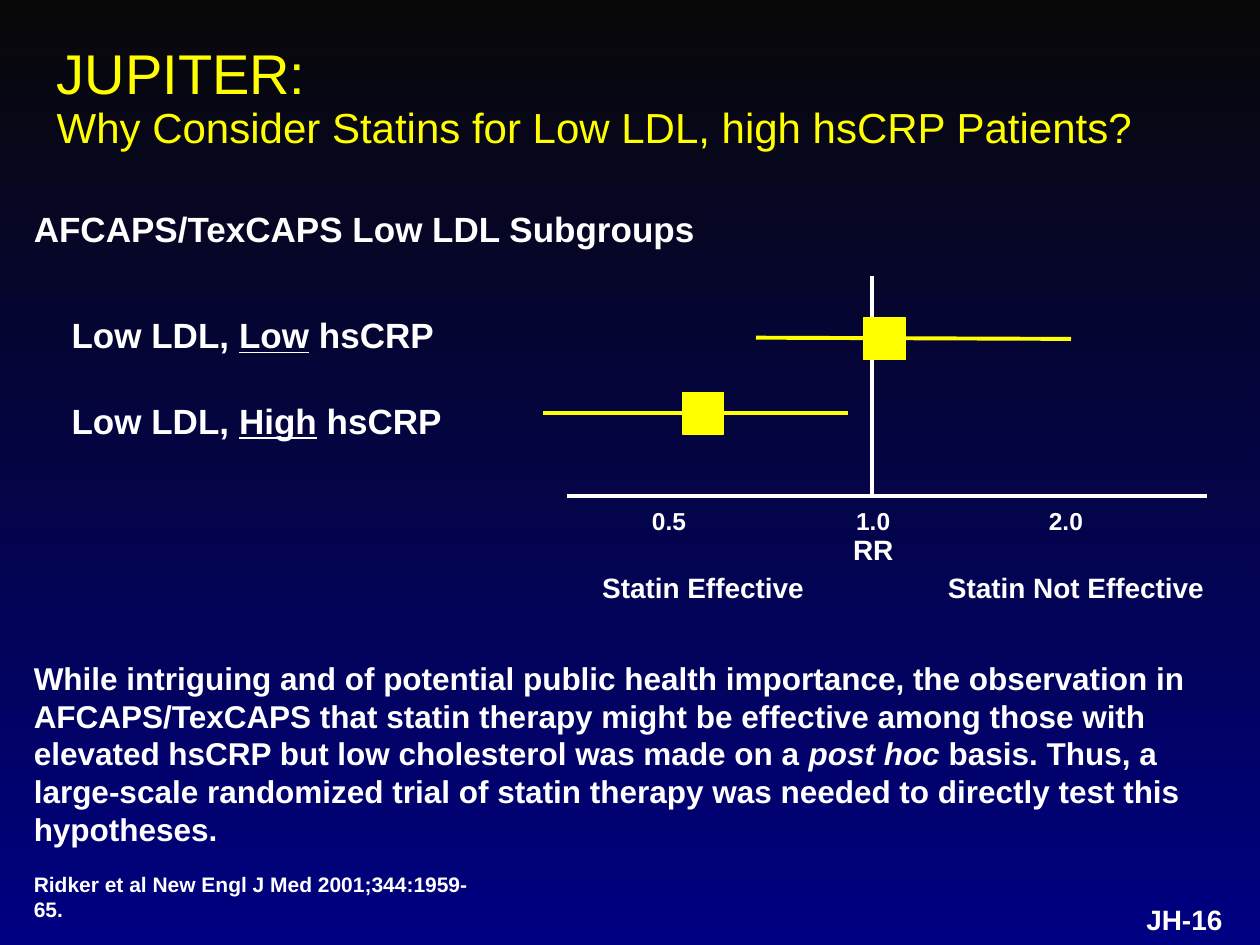
from dataclasses import dataclass

from lxml import etree
from pptx import Presentation
from pptx.dml.color import RGBColor
from pptx.enum.shapes import MSO_CONNECTOR, MSO_SHAPE
from pptx.enum.text import MSO_ANCHOR, MSO_AUTO_SIZE, PP_ALIGN
from pptx.oxml.ns import qn
from pptx.util import Inches, Pt

LEFT, CENTER, RIGHT = PP_ALIGN.LEFT, PP_ALIGN.CENTER, PP_ALIGN.RIGHT
TOP, BOTTOM = MSO_ANCHOR.TOP, MSO_ANCHOR.BOTTOM
NO_FIT = MSO_AUTO_SIZE.NONE
STRAIGHT, RECT = MSO_CONNECTOR.STRAIGHT, MSO_SHAPE.RECTANGLE


@dataclass(frozen=True)
class Theme:
    font: str = "Arial"
    white: RGBColor = RGBColor(0xFF, 0xFF, 0xFF)
    yellow: RGBColor = RGBColor(0xFF, 0xFF, 0x00)
    dark: RGBColor = RGBColor(0x08, 0x08, 0x08)
    blue: RGBColor = RGBColor(0x00, 0x00, 0x82)
    title: int = 32
    sub: int = 24
    head: int = 20
    body: int = 18
    label: int = 16
    tick: int = 14
    cite: int = 12
    rule: float = 2.25


THEME = Theme()


def set_font(font, size, color, bold):
    font.name = THEME.font
    font.size = Pt(size)
    font.bold = bold
    font.color.rgb = color


def add_text(slide, box, lines, size, align=LEFT, anchor=TOP, wrap=True, gap=0):
    left, top, width, height = box
    shape = slide.shapes.add_textbox(
        Inches(left), Inches(top), Inches(width), Inches(height))
    frame = shape.text_frame
    frame.word_wrap = wrap
    frame.vertical_anchor = anchor
    for index, parts in enumerate(lines):
        para = frame.add_paragraph() if index else frame.paragraphs[0]
        para.alignment = align
        para.space_before = Pt(gap if index else 0)
        set_font(para.font, size, THEME.white, True)
        for text, style in parts:
            run = para.add_run()
            run.text = text
            if style == "italic":
                run.font.italic = True
            elif style == "under":
                run.font.underline = True


def add_label(slide, box, text, size, **options):
    add_text(slide, box, [[(text, None)]], size, **options)


def add_line(slide, start, end, color):
    line = slide.shapes.add_connector(
        STRAIGHT, *(Inches(value) for value in (*start, *end)))
    line.line.color.rgb = color
    line.line.width = Pt(THEME.rule)
    etree.SubElement(line._element.spPr, qn("a:effectLst"))


def add_back(slide):
    fill = slide.background.fill
    fill.gradient()
    fill.gradient_angle = 270
    for stop, color, place in zip(
            fill.gradient_stops, (THEME.dark, THEME.blue), (0, 1)):
        stop.color.rgb = color
        stop.position = place


def add_title(slide, box):
    title = slide.shapes.title
    title.left, title.top, title.width, title.height = map(Inches, box)
    frame = title.text_frame
    frame.auto_size = NO_FIT
    frame.word_wrap = True
    frame.vertical_anchor = BOTTOM
    para = frame.paragraphs[0]
    para.alignment = LEFT
    para.line_spacing = 0.9
    set_font(para.font, THEME.title, THEME.yellow, False)
    run = para.add_run()
    run.text = "JUPITER:"
    run.font.size = Pt(THEME.title)
    para.add_line_break()
    run = para.add_run()
    run.text = "Why Consider Statins for Low LDL, high hsCRP Patients?"
    run.font.size = Pt(THEME.sub)


def add_groups(slide, box):
    left, top, width, height = box
    add_label(slide, (left, top, width, 0.43),
              "AFCAPS/TexCAPS Low LDL Subgroups", THEME.head, wrap=False)
    lines = [[("Low LDL, ", None), (level, "under"), (" hsCRP", None)]
             for level in ("Low", "High")]
    add_text(slide, (left + 0.3, top + 0.84, 3.14, height - 0.84),
             lines, THEME.head, wrap=False, gap=25)


def add_forest(slide, box):
    left, top, width, height = box
    base = top + 1.75
    axis = left + 2.61
    add_line(slide, (left + 0.19, base), (left + width, base), THEME.white)
    add_line(slide, (axis, base), (axis, top), THEME.white)

    ticks = (("0.5", 1.0), ("1.0", 2.62), ("2.0", 4.15))
    for text, mid in ticks:
        add_label(slide, (left + mid - 0.24, base + 0.03, 0.48, 0.33),
                  text, THEME.tick, align=CENTER, wrap=False)
    notes = (("Statin Effective", 1.27, 0.54, 1.81),
             ("RR", 2.62, 0.24, 0.52),
             ("Statin Not Effective", 4.23, 0.54, 2.24))
    for text, mid, drop, wide in notes:
        add_label(slide, (left + mid - wide / 2, base + drop, wide, 0.37),
                  text, THEME.label, align=CENTER, wrap=False)

    side = 0.33
    rows = ((1.69, 4.19, 2.71, 0.49, 0.5), (0, 2.42, 1.27, 1.09, 1.09))
    for low, high, mid, start, end in rows:
        mark = slide.shapes.add_shape(
            RECT, Inches(left + mid - side / 2), Inches(top + end - side / 2),
            Inches(side), Inches(side))
        mark.shadow.inherit = False
        mark.fill.solid()
        mark.fill.fore_color.rgb = THEME.yellow
        mark.line.color.rgb = THEME.yellow
        mark.line.width = Pt(0.75)
        add_line(slide, (left + low, top + start), (left + high, top + end),
                 THEME.yellow)


def add_notes(slide, box):
    left, top, width, height = box
    add_text(slide, (left, top, width, 1.6), [[
        ("While intriguing and of potential public health importance, the "
         "observation in AFCAPS/TexCAPS that statin therapy might be effective "
         "among those with elevated hsCRP but low cholesterol was made on a ",
         None),
        ("post hoc", "italic"),
        (" basis. Thus, a large-scale randomized trial of statin therapy was "
         "needed to directly test this hypotheses.", None),
    ]], THEME.body)
    add_label(slide, (left, top + 1.69, 3.8, 0.3),
              "Ridker et al New Engl J Med 2001;344:1959-65.", THEME.cite)
    add_label(slide, (8.3, top + height - 0.35, 1.5, 0.35),
              "JH-16", THEME.label, align=RIGHT, anchor=BOTTOM)


def main():
    deck = Presentation()
    deck.slide_width, deck.slide_height = Inches(10), Inches(7.5)
    slide = deck.slides.add_slide(deck.slide_layouts[5])
    add_back(slide)
    add_title(slide, (0.35, 0.36, 9.3, 0.9))
    add_groups(slide, (0.17, 1.6, 5.47, 1.94))
    add_forest(slide, (4.31, 2.19, 5.27, 2.66))
    add_notes(slide, (0.17, 5.18, 9.44, 2.3))
    deck.save("out.pptx")


if __name__ == "__main__":
    main()
